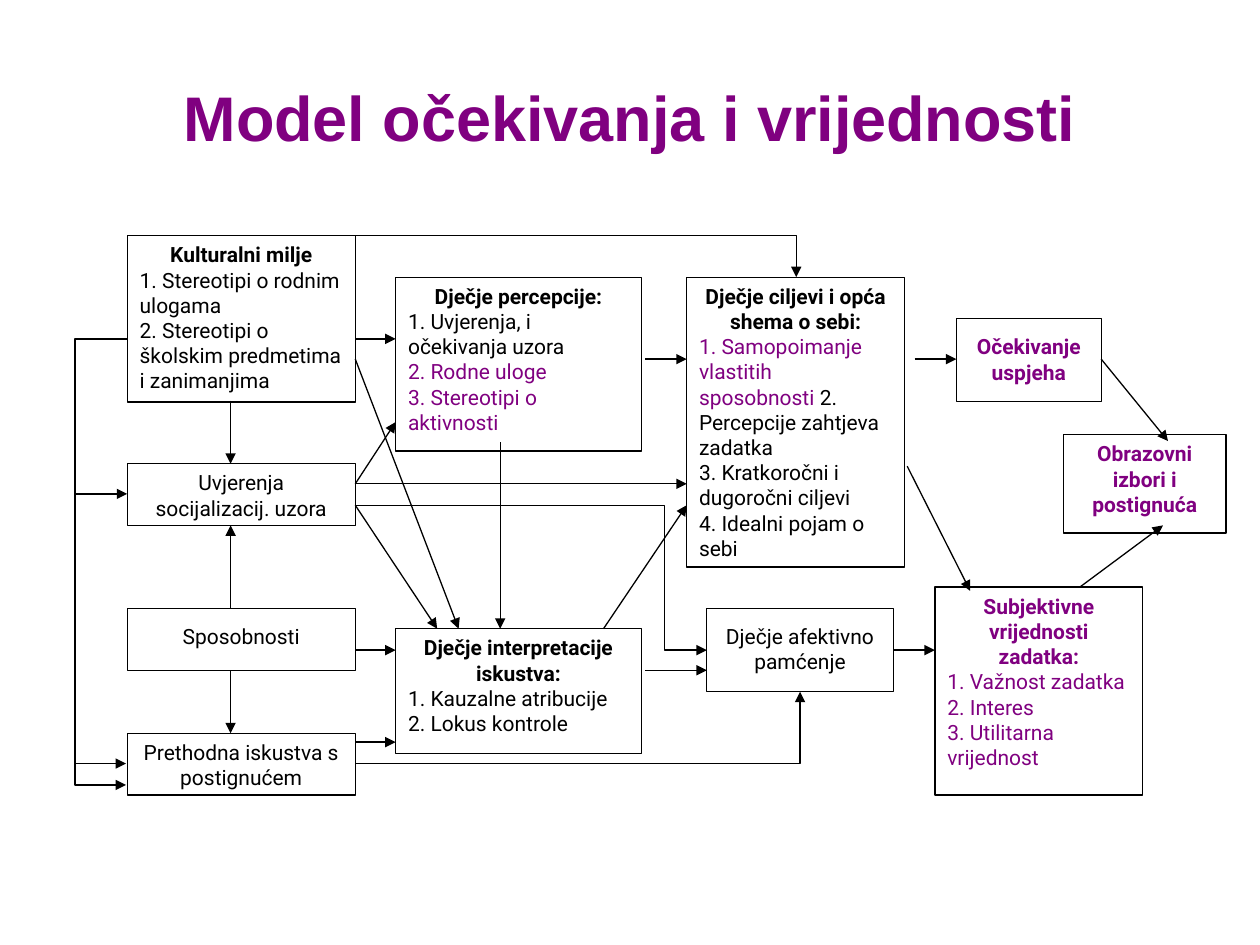
from dataclasses import dataclass

from lxml.etree import SubElement
from pptx import Presentation
from pptx.dml.color import RGBColor
from pptx.enum.shapes import MSO_CONNECTOR as Link
from pptx.enum.shapes import MSO_SHAPE as Preset
from pptx.enum.text import MSO_ANCHOR as Anchor
from pptx.enum.text import PP_ALIGN as Align
from pptx.oxml.ns import qn
from pptx.slide import Slide
from pptx.util import Inches, Pt


@dataclass(frozen=True)
class Theme:
    black: RGBColor = RGBColor(0, 0, 0)
    white: RGBColor = RGBColor(255, 255, 255)
    purple: RGBColor = RGBColor(128, 0, 128)
    title_font: str = "Arial"
    body_font: str = "Roboto"
    title_size: Pt = Pt(36)
    body_size: Pt = Pt(12)
    stroke: Pt = Pt(0.75)


THEME = Theme()
BLACK, PURPLE = THEME.black, THEME.purple


@dataclass(frozen=True)
class Span:
    text: str
    color: RGBColor = BLACK


@dataclass(frozen=True)
class Box:
    left: float
    top: float
    width: float
    height: float
    heading: Span
    bold: bool = True
    items: tuple[tuple[Span, ...], ...] = ()
    top_inset: float = 0.05


@dataclass(frozen=True)
class Arrow:
    start: tuple[float, float]
    end: tuple[float, float]
    bend: str = ""
    adjustments: tuple[float, ...] = ()
    two_headed: bool = False


def entries(*texts: str, color: RGBColor = BLACK) -> tuple[tuple[Span, ...], ...]:
    return tuple((Span(text, color),) for text in texts)


LEFT, LEFT_WIDTH = 1.01, 1.81
LEFT_EDGE = LEFT + LEFT_WIDTH
AXIS = 1.83
MIDDLE, MIDDLE_WIDTH = 3.14, 1.95
GOALS = 5.45
LOWERED = 0.12

BOXES = (
    Box(LEFT, 1.87, LEFT_WIDTH, 1.32, Span("Kulturalni milje"),
        items=entries("1. Stereotipi o rodnim ulogama",
                      "2. Stereotipi o školskim predmetima i zanimanjima")),
    Box(LEFT, 3.68, LEFT_WIDTH, 0.49, Span("Uvjerenja socijalizacij. uzora"), bold=False),
    Box(LEFT, 4.83, LEFT_WIDTH, 0.49, Span("Sposobnosti"), bold=False, top_inset=LOWERED),
    Box(LEFT, 5.82, LEFT_WIDTH, 0.49, Span("Prethodna iskustva s postignućem"), bold=False),
    Box(MIDDLE, 2.2, MIDDLE_WIDTH, 1.38, Span("Dječje percepcije:"),
        items=entries("1. Uvjerenja, i očekivanja uzora")
        + entries("2. Rodne uloge", "3. Stereotipi o aktivnosti", color=PURPLE)),
    Box(MIDDLE, 4.99, MIDDLE_WIDTH, 0.99, Span("Dječje interpretacije iskustva:"),
        items=entries("1. Kauzalne atribucije", "2. Lokus kontrole")),
    Box(7.42, 4.66, 1.65, 1.65, Span("Subjektivne vrijednosti zadatka:", PURPLE),
        items=entries("1. Važnost zadatka", "2. Interes", "3. Utilitarna vrijednost",
                      color=PURPLE)),
    Box(5.61, 4.83, 1.48, 0.66, Span("Dječje afektivno pamćenje"), bold=False,
        top_inset=LOWERED),
    Box(7.59, 2.53, 1.15, 0.66, Span("Očekivanje uspjeha", PURPLE), top_inset=LOWERED),
    Box(GOALS, 2.2, 1.73, 2.3, Span("Dječje ciljevi i opća shema o sebi:"),
        items=((Span("1. Samopoimanje vlastitih sposobnosti", PURPLE),
                Span(" 2. Percepcije zahtjeva zadatka")),)
        + entries("3. Kratkoročni i dugoročni ciljevi", "4. Idealni pojam o sebi")),
    Box(8.44, 3.45, 1.29, 0.78, Span("Obrazovni izbori i postignuća", PURPLE)),
)

ARROWS = (
    Arrow((LEFT_EDGE, 2.69), (MIDDLE, 2.69)),
    Arrow((LEFT_EDGE, 2.85), (3.64, 4.99)),
    Arrow((AXIS, 3.18), (AXIS, 3.68)),
    Arrow((AXIS, 4.83), (AXIS, 4.17)),
    Arrow((AXIS, 5.32), (AXIS, 5.82)),
    Arrow((LEFT, 3.92), (LEFT - 0.01, 6.06), "bentConnector3", (42,), two_headed=True),
    Arrow((LEFT, 2.69), (LEFT - 0.01, 6.23), "bentConnector3", (42,)),
    Arrow((LEFT_EDGE, 3.84), (MIDDLE, 3.35)),
    Arrow((LEFT_EDGE, 4.01), (3.47, 4.99)),
    Arrow((LEFT_EDGE, 3.84), (GOALS, 3.84)),
    Arrow((LEFT_EDGE, 5.16), (MIDDLE, 5.16)),
    Arrow((LEFT_EDGE, 5.89), (MIDDLE, 5.89)),
    Arrow((LEFT_EDGE, 6.06), (6.35, 5.49), "bentConnector2"),
    Arrow((LEFT_EDGE, 4.01), (5.61, 5.16), "bentConnector3", (0.88,)),
    Arrow((3.97, 3.51), (3.97, 4.99)),
    Arrow((4.79, 4.99), (GOALS, 4.01)),
    Arrow((5.12, 5.32), (5.61, 5.32)),
    Arrow((7.09, 5.16), (7.42, 5.16)),
    Arrow((7.26, 2.85), (7.59, 2.85)),
    Arrow((7.2, 3.7), (7.7, 4.69)),
    Arrow((8.74, 2.85), (9.27, 3.5)),
    Arrow((8.57, 4.66), (9.23, 4.17)),
    Arrow((5.12, 2.85), (GOALS, 2.85)),
    Arrow((LEFT_EDGE, 2.53), (6.32, 2.2), "bentConnector4", (0, 2)),
)


def draw_title(slide: Slide, text: str) -> None:
    title = slide.shapes.add_textbox(Inches(0.5), Inches(0.3), Inches(9), Inches(1.25))
    frame = title.text_frame
    frame.word_wrap = True
    frame.vertical_anchor = Anchor.MIDDLE
    heading = frame.paragraphs[0]
    heading.text = text
    heading.alignment = Align.CENTER
    heading.font.name = THEME.title_font
    heading.font.size = THEME.title_size
    heading.font.bold = True
    heading.font.color.rgb = PURPLE


def draw_box(slide: Slide, box: Box) -> None:
    panel = slide.shapes.add_shape(
        Preset.RECTANGLE, *map(Inches, (box.left, box.top, box.width, box.height)))
    panel.shadow.inherit = False
    panel.fill.solid()
    panel.fill.fore_color.rgb = THEME.white
    panel.line.color.rgb = BLACK
    panel.line.width = THEME.stroke
    frame = panel.text_frame
    frame.word_wrap = True
    frame.vertical_anchor = Anchor.TOP
    frame.margin_top = Inches(box.top_inset)
    for index, spans in enumerate(((box.heading,), *box.items)):
        paragraph = frame.add_paragraph() if index else frame.paragraphs[0]
        paragraph.alignment = Align.LEFT if index else Align.CENTER
        paragraph.font.name = THEME.body_font
        paragraph.font.size = THEME.body_size
        paragraph.font.bold = box.bold and index == 0
        paragraph.font.color.rgb = spans[0].color
        for span in spans:
            run = paragraph.add_run()
            run.text = span.text
            if span.color != spans[0].color:
                run.font.color.rgb = span.color


def draw_arrow(slide: Slide, arrow: Arrow) -> None:
    link = slide.shapes.add_connector(
        Link.ELBOW if arrow.bend else Link.STRAIGHT,
        *map(Inches, arrow.start + arrow.end))
    link.line.color.rgb = BLACK
    link.line.width = THEME.stroke
    properties = link._element.spPr
    if arrow.bend:
        geometry = properties.find(qn("a:prstGeom"))
        geometry.set("prst", arrow.bend)
        guides = geometry.find(qn("a:avLst"))
        for number, ratio in enumerate(arrow.adjustments, 1):
            name = f"adj{number}"
            SubElement(guides, qn("a:gd"), name=name, fmla=f"val {round(ratio * 100000)}")
    stroke = properties.find(qn("a:ln"))
    for tip in ("a:headEnd", "a:tailEnd") if arrow.two_headed else ("a:tailEnd",):
        SubElement(stroke, qn(tip), type="triangle")
    SubElement(properties, qn("a:effectLst"))


def main() -> None:
    deck = Presentation()
    deck.slide_width, deck.slide_height = Inches(10), Inches(7.5)
    slide = deck.slides.add_slide(deck.slide_layouts[6])
    draw_title(slide, "Model očekivanja i vrijednosti")
    for box in BOXES:
        draw_box(slide, box)
    for arrow in ARROWS:
        draw_arrow(slide, arrow)
    deck.save("out.pptx")


if __name__ == "__main__":
    main()
